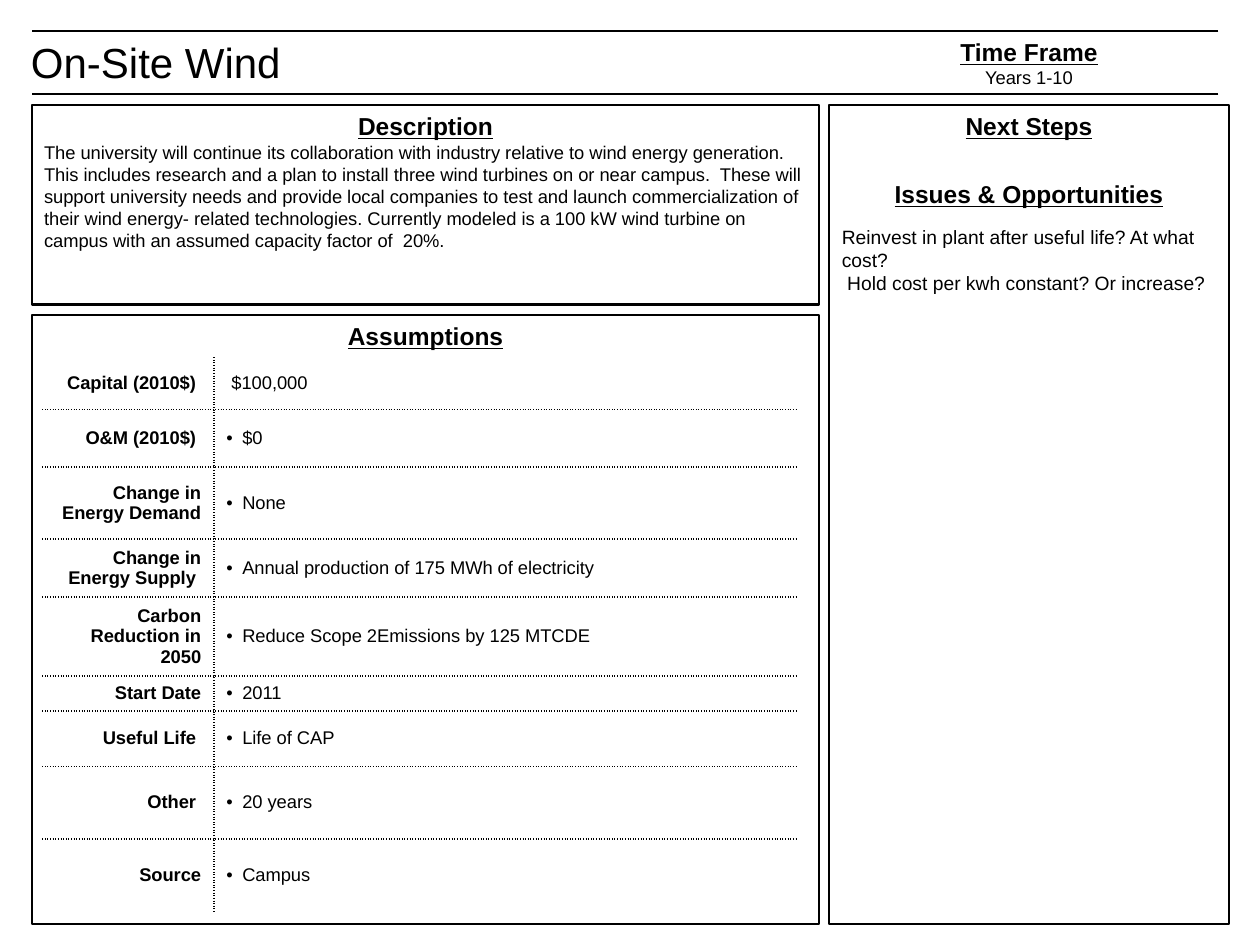
import pptx
import pptx.util
import pptx.dml.color
import pptx.enum.dml
import pptx.enum.shapes
import pptx.enum.text
import pptx.oxml
import pptx.oxml.ns

Cm = pptx.util.Cm
Pt = pptx.util.Pt
ALIGN = pptx.enum.text.PP_ALIGN
ANCHOR = pptx.enum.text.MSO_ANCHOR
INK = "000000"

TITLE = "On-Site Wind"
DESCRIPTION = (
    "The university will continue its collaboration with industry relative to wind "
    "energy generation.  This includes research and a plan to install three wind "
    "turbines on or near campus.  These will support university needs and provide "
    "local companies to test and launch commercialization of their wind energy- "
    "related technologies. Currently modeled is a 100 kW wind turbine on campus "
    "with an assumed capacity factor of  20%."
)
HEADING = {"size": 14, "bold": True, "align": ALIGN.CENTER}
BODY = {"size": 10.5}
NOTE = {"size": 11}
TIME_FRAME = [
    ("Time Frame", HEADING),
    ("Years 1-10", {**BODY, "align": ALIGN.CENTER}),
]
PANELS = [
    ((0.64, 2.12, 15.88, 4.02), [("Description", HEADING), (DESCRIPTION, BODY)]),
    ((0.64, 6.35, 15.88, 12.28), [("Assumptions", HEADING)]),
    ((16.72, 2.12, 8.05, 16.51), [
        ("Next Steps", HEADING),
        ("Issues & Opportunities", {**HEADING, "before": 22}),
        ("Reinvest in plant after useful life? At what cost?", {**NOTE, "before": 9.5}),
        (" Hold cost per kwh constant? Or increase?", NOTE),
    ]),
]
ASSUMPTIONS = [
    ("Capital (2010$) ", " $100,000", 1.05),
    ("O&M (2010$) ", "$0", 1.16),
    ("Change in Energy Demand", "None", 1.46),
    ("Change in Energy Supply ", "Annual production of 175 MWh of electricity", 1.16),
    ("Carbon Reduction in 2050", "Reduce Scope 2Emissions by 125 MTCDE", 1.6),
    ("Start Date", "2011", 0.7),
    ("Useful Life ", "Life of CAP", 1.12),
    ("Other ", "20 years", 1.46),
    ("Source", "Campus", 1.46),
]
TABLE_LEFT, TABLE_TOP = 0.85, 7.2
COLUMN_WIDTHS = (3.46, 11.76)
RULES = (0.63, 1.9)


def color(hex_text):
    return pptx.dml.color.RGBColor.from_string(hex_text)


def write(para, text, size, bold=False, align=ALIGN.LEFT, before=0):
    para.text = text
    para.alignment = align
    para.space_before = Pt(before)
    for span in para.runs:
        span.font.name = "Arial"
        span.font.size = Pt(size)
        span.font.bold = bold
        span.font.underline = bold and size == HEADING["size"]
        span.font.color.rgb = color(INK)


def fill_text(frame, lines, anchor):
    frame.word_wrap = True
    frame.vertical_anchor = anchor
    frame.text = "\n".join(text for text, style in lines)
    for para, (text, style) in zip(frame.paragraphs, lines):
        write(para, text, **style)


def add_panel(page, place, lines):
    panel = page.shapes.add_shape(
        pptx.enum.shapes.MSO_SHAPE.RECTANGLE, *map(Cm, place))
    panel.shadow.inherit = False
    panel.fill.background()
    panel.line.color.rgb = color(INK)
    panel.line.width = Pt(1.25)
    fill_text(panel.text_frame, lines, ANCHOR.TOP)


def add_rule(page, top):
    rule = page.shapes.add_connector(
        pptx.enum.shapes.MSO_CONNECTOR.STRAIGHT, Cm(24.56), Cm(top), Cm(0.64), Cm(top))
    rule.line.color.rgb = color(INK)
    rule.line.width = Pt(1.25)
    rule._element.spPr.append(pptx.oxml.parse_xml(
        f'<a:effectLst {pptx.oxml.ns.nsdecls("a")}/>'))


def set_borders(cell, dotted):
    properties = cell._tc.get_or_add_tcPr()
    for side in ("L", "R", "T", "B"):
        if side in dotted:
            style = (f'<a:solidFill><a:srgbClr val="{INK}"/></a:solidFill>'
                     '<a:prstDash val="sysDot"/>')
        else:
            style = "<a:noFill/>"
        properties.append(pptx.oxml.parse_xml(
            f'<a:ln{side} {pptx.oxml.ns.nsdecls("a")} w="12700">{style}</a:ln{side}>'))


def add_bullet(para):
    properties = para._p.get_or_add_pPr()
    properties.set("marL", str(Cm(0.32)))
    properties.set("indent", str(-Cm(0.32)))
    for item in ('buFont {} typeface="Arial"', 'buChar {} char="•"'):
        properties.append(pptx.oxml.parse_xml(
            f'<a:{item.format(pptx.oxml.ns.nsdecls("a"))}/>'))


def add_assumptions(page):
    last = len(ASSUMPTIONS) - 1
    height = sum(row[2] for row in ASSUMPTIONS)
    table = page.shapes.add_table(
        len(ASSUMPTIONS), 2, Cm(TABLE_LEFT), Cm(TABLE_TOP),
        Cm(sum(COLUMN_WIDTHS)), Cm(height)).table
    table.first_row = table.horz_banding = False
    for column, width in zip(table.columns, COLUMN_WIDTHS):
        column.width = Cm(width)
    for number, (label, value, row_height) in enumerate(ASSUMPTIONS):
        table.rows[number].height = Cm(row_height)
        edges = ("T" if number else "") + ("B" if number < last else "")
        for index, text in enumerate((label, value)):
            cell = table.cell(number, index)
            cell.vertical_anchor = ANCHOR.MIDDLE
            set_borders(cell, edges + "RL"[index])
            cell.fill.background()
            write(cell.text_frame.paragraphs[0], text, **BODY, bold=index == 0,
                  align=ALIGN.LEFT if index else ALIGN.RIGHT)
        if number:
            add_bullet(table.cell(number, 1).text_frame.paragraphs[0])


def main():
    deck = pptx.Presentation()
    deck.slide_width, deck.slide_height = Cm(25.4), Cm(19.05)
    page = deck.slides.add_slide(deck.slide_layouts[5])

    title = page.shapes.title
    title.left, title.top, title.width, title.height = map(Cm, (0.37, 0.61, 15, 1.27))
    fill_text(title.text_frame, [(TITLE, {"size": 24})], ANCHOR.MIDDLE)

    for top in RULES:
        add_rule(page, top)
    for place, lines in PANELS:
        add_panel(page, place, lines)

    box = page.shapes.add_textbox(*map(Cm, (16.72, 0.63, 8.05, 1.27)))
    fill_text(box.text_frame, TIME_FRAME, ANCHOR.MIDDLE)
    add_assumptions(page)
    deck.save("out.pptx")


if __name__ == "__main__":
    main()
